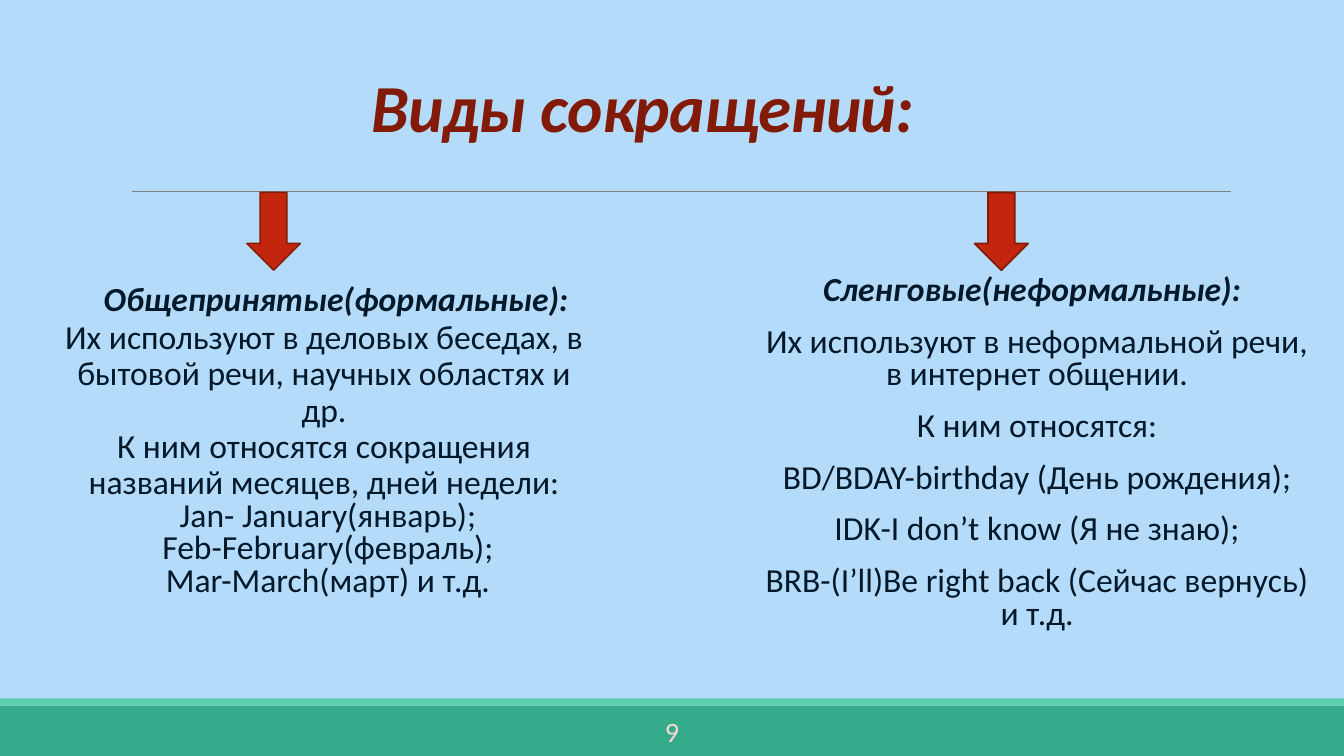
from lxml.etree import SubElement
from pptx import Presentation
from pptx.dml.color import RGBColor
from pptx.enum.shapes import MSO_CONNECTOR, MSO_SHAPE
from pptx.enum.text import MSO_ANCHOR, MSO_AUTO_SIZE, PP_ALIGN
from pptx.oxml.ns import qn
from pptx.util import Cm, Pt

# Content: each line is (text, style)
TITLE = "Виды сокращений:"
NUMBER = "9"
FORMAL = [
    ("Общепринятые(формальные):", "formal"),
    ("Их используют в деловых беседах, в бытовой речи, научных областях и др.", "prose"),
    ("К ним относятся сокращения названий месяцев, дней недели:", "prose"),
    ("Jan- January(январь);", "month"),
    ("Feb-February(февраль);", "month"),
    ("Mar-March(март) и т.д.", "month"),
]
SLANG = [
    ("Сленговые(неформальные):", "slang"),
    ("Их используют в неформальной речи, в интернет общении.", "item"),
    ("К ним относятся:", "item"),
    ("BD/BDAY-birthday (День рождения);", "item"),
    ("IDK-I don’t know (Я не знаю);", "item"),
    ("BRB-(I’ll)Be right back (Сейчас вернусь) и т.д.", "item"),
]

# Look
COLORS = {
    "back": "B4DCFA", "band": "34AC8B", "strip": "5DCEAF", "rule": "808080",
    "title": "821A08", "text": "031828", "number": "FCD9D3",
    "arrow": "C3260C", "edge": "821A08",
}
FONT = "Calibri"
BOLD = {"bold": True, "italic": True}
LOOSE = {"line_spacing": 0.8, "space_before": Pt(12), "space_after": Pt(2)}
TIGHT = {"space_before": Pt(0), "space_after": Pt(0)}
# Style: paragraph format, font format, left indent in cm
STYLES = {
    "formal": (LOOSE, BOLD, 0.61),
    "slang": (LOOSE, BOLD, 0),
    "prose": ({**TIGHT, "line_spacing": 0.9}, {}, 0),
    "month": ({**TIGHT, "line_spacing": 0.8}, {}, 0.2),
    "item": (LOOSE, {}, 0.25),
}

# Places in cm
WIDE, HIGH = 33.87, 19.05
BAND, STRIP = 1.27, 0.18
RULE = (3.33, 31.01, 4.83)
ARROW = (1.35, 1.96)
ARROWS = [(6.22, 1), (24.56, 1.25)]  # left edge, line width


def color(name):
    return RGBColor.from_string(COLORS[name])


def put(item, values):
    for key, value in values.items():
        setattr(item, key, value)


def place(shape, left, top, width, height):
    put(shape, {"left": Cm(left), "top": Cm(top),
                "width": Cm(width), "height": Cm(height)})


def write(para, text, size, tint, **more):
    run = para.add_run()
    run.text = text
    put(run.font, {"name": FONT, "size": Pt(size), **more})
    run.font.color.rgb = color(tint)
    return run


def draw(slide, kind, box, fill):
    shape = slide.shapes.add_shape(kind, *map(Cm, box))
    shape.shadow.inherit = False
    shape.fill.solid()
    shape.fill.fore_color.rgb = color(fill)
    shape.line.fill.background()
    return shape


def column(body, box, lines):
    place(body, *box)
    frame = body.text_frame
    put(frame, {"auto_size": MSO_AUTO_SIZE.NONE, "word_wrap": True,
                "vertical_anchor": MSO_ANCHOR.TOP,
                "margin_left": 0, "margin_right": 0,
                "margin_top": Cm(0.13), "margin_bottom": Cm(0.13)})
    for i, (text, style) in enumerate(lines):
        para = frame.add_paragraph() if i else frame.paragraphs[0]
        layout, face, indent = STYLES[style]
        put(para, {"alignment": PP_ALIGN.CENTER, **layout})
        props = para._p.get_or_add_pPr()
        props.set("marL", str(int(Cm(indent))))
        props.set("indent", "0")
        SubElement(props, qn("a:buNone"))
        write(para, text, 24, "text", **face)


def main():
    deck = Presentation()
    put(deck, {"slide_width": Cm(WIDE), "slide_height": Cm(HIGH)})
    slide = deck.slides.add_slide(deck.slide_layouts[3])
    slide.background.fill.solid()
    slide.background.fill.fore_color.rgb = color("back")
    title, left, right = slide.placeholders

    # Bottom bands
    edge = HIGH - BAND
    draw(slide, MSO_SHAPE.RECTANGLE, (0, edge, WIDE, BAND), "band")
    draw(slide, MSO_SHAPE.RECTANGLE, (0, edge - STRIP, WIDE, STRIP), "strip")

    # Rule under the title
    start, end, level = RULE
    rule = slide.shapes.add_connector(
        MSO_CONNECTOR.STRAIGHT, Cm(start), Cm(level), Cm(end), Cm(level))
    rule.line.color.rgb = color("rule")
    rule.line.width = Pt(0.5)
    SubElement(rule._element.spPr, qn("a:effectLst"))

    # Title
    place(title, 1.42, 0.79, 29.57, 4.04)
    put(title.text_frame, {"auto_size": MSO_AUTO_SIZE.NONE, "word_wrap": True,
                           "vertical_anchor": MSO_ANCHOR.MIDDLE})
    head = title.text_frame.paragraphs[0]
    put(head, {"alignment": PP_ALIGN.CENTER, "line_spacing": 0.85})
    run = write(head, TITLE, 48, "title", **BOLD)
    run._r.get_or_add_rPr().set("spc", "-50")

    # Two columns
    column(left, (1.42, 7.06, 13.49, 9.3), FORMAL)
    column(right, (19, 6.81, 14.02, 9.55), SLANG)

    # Slide number
    note = slide.shapes.add_textbox(Cm(10.24), Cm(17.93), Cm(13.39), Cm(1.02))
    put(note.text_frame, {"word_wrap": True, "vertical_anchor": MSO_ANCHOR.MIDDLE})
    para = note.text_frame.paragraphs[0]
    para.alignment = PP_ALIGN.CENTER
    write(para, NUMBER, 20, "number")

    # Arrows hanging from the rule
    for x, width in ARROWS:
        arrow = draw(slide, MSO_SHAPE.DOWN_ARROW, (x, level + 0.02, *ARROW), "arrow")
        arrow.line.color.rgb = color("edge")
        arrow.line.width = Pt(width)

    deck.save("out.pptx")


if __name__ == "__main__":
    main()
